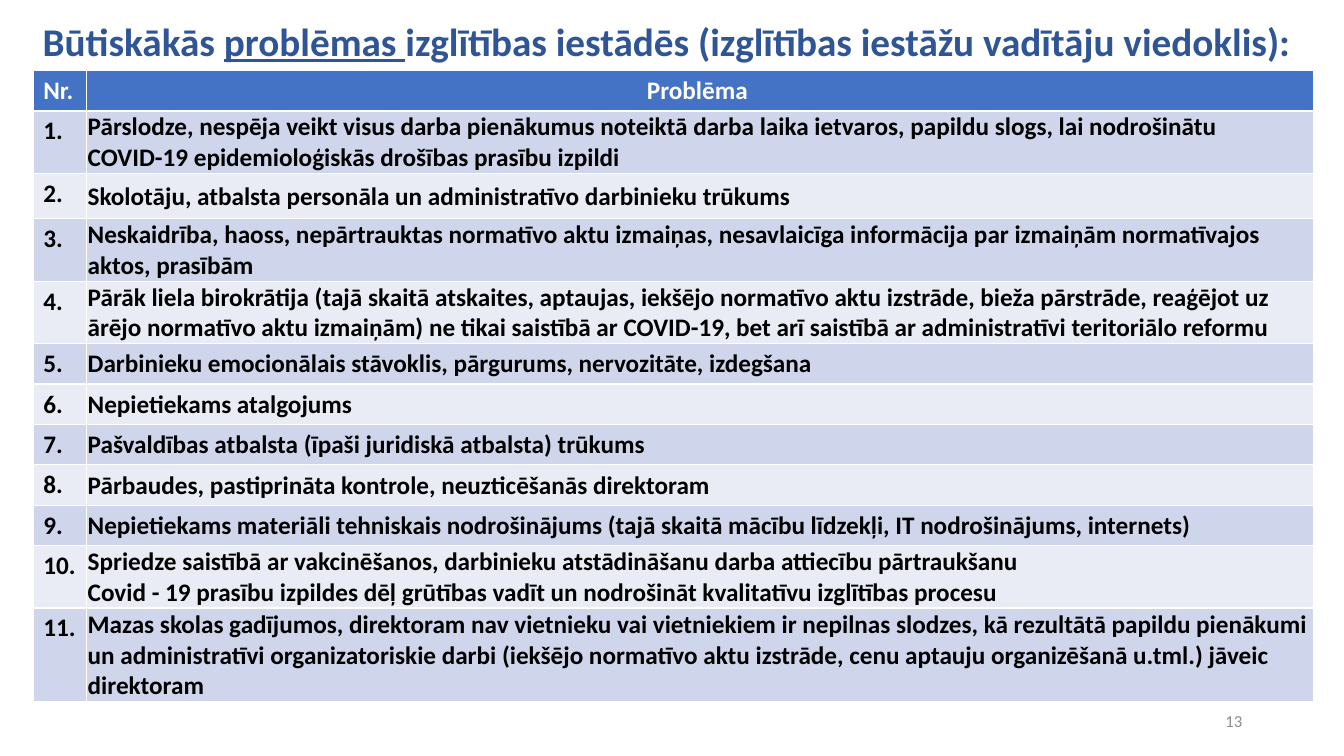
import pptx
import pptx.dml.color
import pptx.enum.text
import pptx.util

Inches = pptx.util.Inches
Color = pptx.dml.color.RGBColor
Align = pptx.enum.text.PP_ALIGN
Anchor = pptx.enum.text.MSO_ANCHOR

FONT = "Calibri"
TITLE_BLUE = Color(0x2F, 0x55, 0x97)
HEADER_BLUE = Color(0x44, 0x72, 0xC4)
BAND_DARK = Color(0xCF, 0xD5, 0xEA)
BAND_LIGHT = Color(0xE9, 0xEB, 0xF5)
WHITE = Color(0xFF, 0xFF, 0xFF)
BLACK = Color(0, 0, 0)
GREY = Color(0x8C, 0x8C, 0x8C)

NUMBER_WIDTH = 0.53
NUMBER_MARGIN_RIGHT = 0.05
HEADER_HEIGHT = 0.4
PROBLEMS = [
    (0.62, Anchor.MIDDLE, ["Pārslodze, nespēja veikt visus darba pienākumus noteiktā darba laika ietvaros, "
                           "papildu slogs, lai nodrošinātu COVID-19 epidemioloģiskās drošības prasību izpildi"]),
    (0.45, Anchor.MIDDLE, ["Skolotāju, atbalsta personāla un administratīvo darbinieku trūkums"]),
    (0.62, Anchor.MIDDLE, ["Neskaidrība, haoss, nepārtrauktas normatīvo aktu izmaiņas, nesavlaicīga "
                           "informācija par izmaiņām normatīvajos aktos, prasībām"]),
    (0.62, Anchor.MIDDLE, ["Pārāk liela birokrātija (tajā skaitā atskaites, aptaujas, iekšējo normatīvo aktu "
                           "izstrāde, bieža pārstrāde, reaģējot uz ārējo normatīvo aktu izmaiņām) ne tikai "
                           "saistībā ar COVID-19, bet arī saistībā ar administratīvi teritoriālo reformu"]),
    (0.4, Anchor.MIDDLE, ["Darbinieku emocionālais stāvoklis, pārgurums, nervozitāte, izdegšana"]),
    (0.4, Anchor.MIDDLE, ["Nepietiekams atalgojums"]),
    (0.4, Anchor.MIDDLE, ["Pašvaldības atbalsta (īpaši juridiskā atbalsta) trūkums"]),
    (0.4, Anchor.MIDDLE, ["Pārbaudes, pastiprināta kontrole, neuzticēšanās direktoram"]),
    (0.4, Anchor.MIDDLE, ["Nepietiekams materiāli tehniskais nodrošinājums (tajā skaitā mācību līdzekļi, "
                          "IT nodrošinājums, internets)"]),
    (0.62, Anchor.BOTTOM, ["Spriedze saistībā ar vakcinēšanos, darbinieku atstādināšanu darba attiecību pārtraukšanu",
                           "Covid - 19 prasību izpildes dēļ grūtības vadīt un nodrošināt kvalitatīvu izglītības procesu"]),
    (0.93, Anchor.BOTTOM, ["Mazas skolas gadījumos, direktoram nav vietnieku vai vietniekiem ir nepilnas slodzes, "
                           "kā rezultātā papildu pienākumi un administratīvi organizatoriskie darbi (iekšējo "
                           "normatīvo aktu izstrāde, cenu aptauju organizēšanā u.tml.) jāveic direktoram"]),
]


def add_span(para, text, size, color, bold=True, underline=False):
    """Add one formatted run to a paragraph."""
    span = para.add_run()
    span.text = text
    span.font.name = FONT
    span.font.size = pptx.util.Pt(size)
    span.font.color.rgb = color
    span.font.bold = bold
    span.font.underline = underline


def add_text_box(page, box, align):
    """Add a middle-anchored text box and return its first paragraph."""
    frame = page.shapes.add_textbox(*map(Inches, box)).text_frame
    frame.word_wrap = True
    frame.vertical_anchor = Anchor.MIDDLE
    para = frame.paragraphs[0]
    para.alignment = align
    return para


def add_title(page, box):
    """Place the heading with its underlined key word."""
    para = add_text_box(page, box, Align.CENTER)
    para.line_spacing = 0.9
    add_span(para, " Būtiskākās ", 28, TITLE_BLUE)
    add_span(para, "problēmas ", 28, TITLE_BLUE, underline=True)
    add_span(para, "izglītības iestādēs (izglītības iestāžu vadītāju viedoklis):", 28, TITLE_BLUE)


def add_page_number(page, box):
    """Place the page number."""
    add_span(add_text_box(page, box, Align.RIGHT), "13", 12, GREY, bold=False)


def fill_cell(cell, lines, fill, color, align=Align.LEFT):
    """Write the lines of a cell as paragraphs and colour the cell."""
    cell.fill.solid()
    cell.fill.fore_color.rgb = fill
    frame = cell.text_frame
    for index, line in enumerate(lines):
        para = frame.add_paragraph() if index else frame.paragraphs[0]
        para.alignment = align
        add_span(para, line, 18, color)


def add_problem_table(page, box):
    """Place the numbered table of problems."""
    table = page.shapes.add_table(len(PROBLEMS) + 1, 2, *map(Inches, box)).table
    table.columns[0].width = Inches(NUMBER_WIDTH)
    table.columns[1].width = Inches(box[2] - NUMBER_WIDTH)
    table.rows[0].height = Inches(HEADER_HEIGHT)
    fill_cell(table.cell(0, 0), ["Nr."], HEADER_BLUE, WHITE)
    fill_cell(table.cell(0, 1), ["Problēma "], HEADER_BLUE, WHITE, Align.CENTER)
    for number, (height, anchor, lines) in enumerate(PROBLEMS, start=1):
        table.rows[number].height = Inches(height)
        band = BAND_DARK if number % 2 else BAND_LIGHT
        label = table.cell(number, 0)
        label.margin_right = Inches(NUMBER_MARGIN_RIGHT)
        fill_cell(label, [f"{number}."], band, BLACK)
        problem = table.cell(number, 1)
        problem.margin_left = problem.margin_right = problem.margin_top = Inches(0.01)
        problem.margin_bottom = 0
        problem.vertical_anchor = anchor
        fill_cell(problem, lines, band, BLACK)


def main():
    """Build the deck and save it."""
    deck = pptx.Presentation()
    deck.slide_width, deck.slide_height = Inches(13.33), Inches(7.5)
    page = deck.slides.add_slide(deck.slide_layouts[6])
    add_title(page, (0, 0.17, 13.13, 0.53))
    add_page_number(page, (9.42, 6.95, 3, 0.4))
    add_problem_table(page, (0.33, 0.7, 12.7, 6.2))
    deck.save("out.pptx")


if __name__ == "__main__":
    main()
